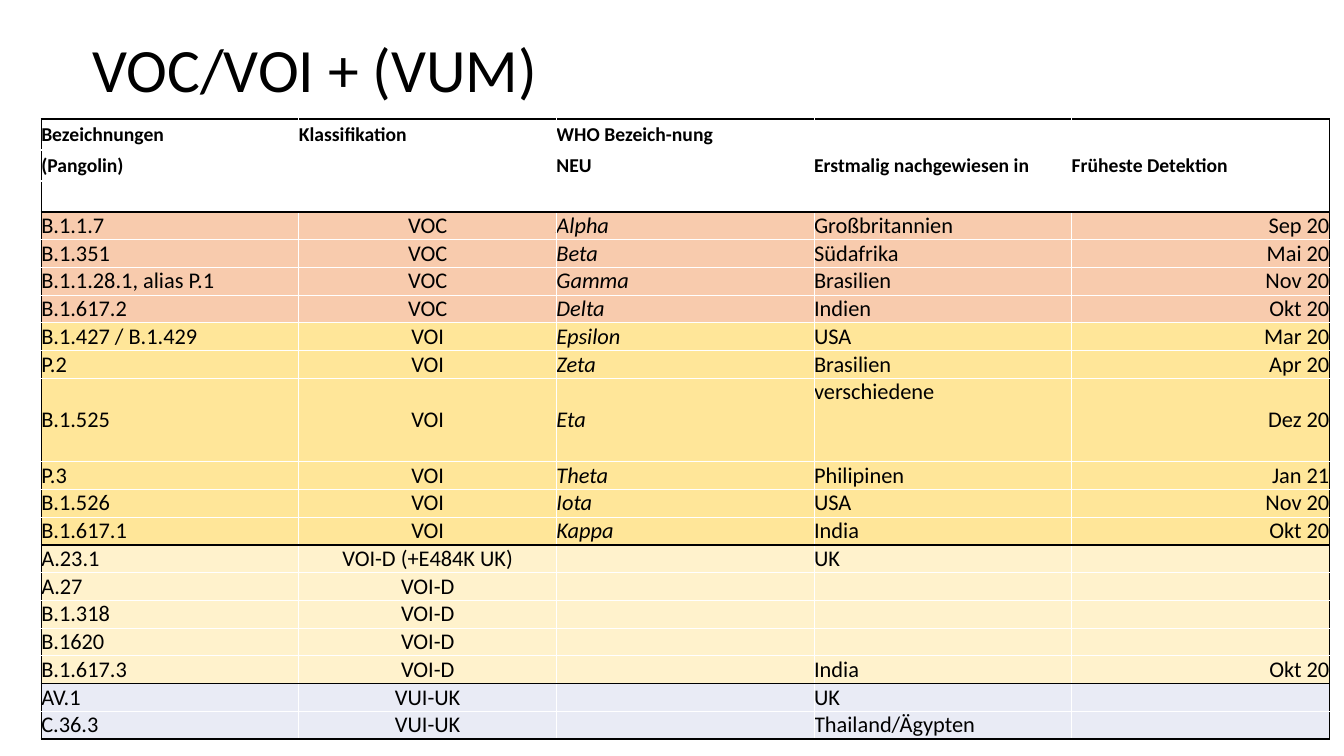
from lxml import etree
from pptx import Presentation
from pptx.dml.color import RGBColor
from pptx.enum.text import MSO_ANCHOR, PP_ALIGN
from pptx.oxml.ns import qn
from pptx.util import Cm, Pt

LEFT, CENTER, RIGHT = PP_ALIGN.LEFT, PP_ALIGN.CENTER, PP_ALIGN.RIGHT
TOP, MIDDLE = MSO_ANCHOR.TOP, MSO_ANCHOR.MIDDLE

COLORS = {
    "ink": "000000",
    "paper": "FFFFFF",
    "VOC": "F8CBAD",
    "VOI": "FFE699",
    "VOI-D": "FFF2CC",
    "VUI-UK": "E9EBF5",
}
TITLE_FORMAT = {"size": Pt(44)}
HEADER_FORMAT = {"size": Pt(14), "bold": True}
BODY_FORMAT = {"size": Pt(16), "bold": False}
WHO_FORMAT = {**BODY_FORMAT, "italic": True}

HEADER = [
    ["Bezeichnungen", "Klassifikation", "WHO Bezeich-nung",
     "Erstmalig nachgewiesen in", "Früheste Detektion"],
    ["(Pangolin)", "", "NEU", "", ""],
    ["", "", "", "", ""],
]
MERGED_HEADER_COLUMNS = (3, 4)
VARIANTS = [
    ["B.1.1.7", "VOC", "Alpha", "Großbritannien", "Sep 20"],
    ["B.1.351", "VOC", "Beta", "Südafrika", "Mai 20"],
    ["B.1.1.28.1, alias P.1", "VOC", "Gamma", "Brasilien", "Nov 20"],
    ["B.1.617.2", "VOC", "Delta", "Indien", "Okt 20"],
    ["B.1.427 / B.1.429", "VOI", "Epsilon", "USA", "Mar 20"],
    ["P.2", "VOI", "Zeta", "Brasilien", "Apr 20"],
    ["B.1.525", "VOI", "Eta", "verschiedene", "Dez 20"],
    ["P.3", "VOI", "Theta", "Philipinen", "Jan 21"],
    ["B.1.526", "VOI", "Iota", "USA", "Nov 20"],
    ["B.1.617.1", "VOI", "Kappa", "India", "Okt 20"],
    ["A.23.1", "VOI-D (+E484K UK)", "", "UK", ""],
    ["A.27", "VOI-D", "", "", ""],
    ["B.1.318", "VOI-D", "", "", ""],
    ["B.1620", "VOI-D", "", "", ""],
    ["B.1.617.3", "VOI-D", "", "India", "Okt 20"],
    ["AV.1", "VUI-UK", "", "UK", ""],
    ["C.36.3", "VUI-UK", "", "Thailand/Ägypten", ""],
]
COLUMN_ALIGNMENTS = [LEFT, CENTER, LEFT, LEFT, RIGHT]
COLUMN_FORMATS = [BODY_FORMAT, BODY_FORMAT, WHO_FORMAT, BODY_FORMAT, BODY_FORMAT]
RULED_ROWS = {0, 3, 13, 18, 20}  # a dark rule runs above each of these rows
HEADER_HEIGHT, VARIANT_HEIGHT, TALL_HEIGHT = 0.78, 0.7, 2.1
TALL_VARIANT = "B.1.525"


class VariantSlide:
    """Holds the style and the slide being filled."""

    def __init__(self, slide, font="Calibri", border_width=Pt(1)):
        self.slide = slide
        self.font = font
        self.border_width = border_width

    def text(self, paragraph, wording, style, alignment=LEFT):
        paragraph.alignment = alignment
        if not wording:
            # The end mark keeps an empty cell as low as its row.
            end_mark = etree.SubElement(paragraph._p, qn("a:endParaRPr"))
            end_mark.set("sz", str(int(style["size"].pt * 100)))
            return
        run = paragraph.add_run()
        run.text = wording
        for attribute, value in {"name": self.font, **style}.items():
            setattr(run.font, attribute, value)
        run.font.color.rgb = RGBColor.from_string(COLORS["ink"])

    def title(self, wording, left, top, width, height):
        frame = self.slide.shapes.add_textbox(
            Cm(left), Cm(top), Cm(width), Cm(height)).text_frame
        frame.word_wrap = True
        frame.vertical_anchor = MIDDLE
        frame.paragraphs[0].line_spacing = 0.9
        self.text(frame.paragraphs[0], wording, TITLE_FORMAT)

    def table(self, left, top, width, heights, column_count):
        table = self.slide.shapes.add_table(
            len(heights), column_count,
            Cm(left), Cm(top), Cm(width), Cm(sum(heights))).table
        table.first_row = table.horz_banding = False
        for row, height in zip(table.rows, heights):
            row.height = Cm(height)
        return table

    def cell(self, cell, wording, fill, style, alignment, anchor, dark_sides):
        for side in ("margin_left", "margin_right", "margin_top", "margin_bottom"):
            setattr(cell, side, 0)
        cell.vertical_anchor = anchor
        self.text(cell.text_frame.paragraphs[0], wording, style, alignment)
        self.borders(cell, dark_sides)
        cell.fill.solid()
        cell.fill.fore_color.rgb = RGBColor.from_string(COLORS[fill])

    def borders(self, cell, dark_sides):
        properties = cell._tc.get_or_add_tcPr()
        for side in "LRTB":
            line = etree.SubElement(
                properties, qn(f"a:ln{side}"), w=str(self.border_width))
            solid = etree.SubElement(line, qn("a:solidFill"))
            color = COLORS["ink" if side in dark_sides else "paper"]
            etree.SubElement(solid, qn("a:srgbClr"), val=color)


def dark_sides(row, column, row_span):
    """Sides of a cell that lie on the outer frame or on a group rule."""
    on_rule = {
        "L": column == 0,
        "R": column == len(COLUMN_ALIGNMENTS) - 1,
        "T": row in RULED_ROWS,
        "B": row + row_span in RULED_ROWS,
    }
    return {side for side, dark in on_rule.items() if dark}


def main():
    presentation = Presentation()
    presentation.slide_width, presentation.slide_height = Cm(33.87), Cm(19.05)
    page = VariantSlide(presentation.slides.add_slide(presentation.slide_layouts[6]))

    page.title("VOC/VOI + (VUM)", 2.08, 0, 29.21, 3.68)

    heights = [HEADER_HEIGHT] * len(HEADER) + [
        TALL_HEIGHT if variant[0] == TALL_VARIANT else VARIANT_HEIGHT
        for variant in VARIANTS]
    table = page.table(1.04, 3, 32.46, heights, len(COLUMN_ALIGNMENTS))
    for column in MERGED_HEADER_COLUMNS:
        table.cell(0, column).merge(table.cell(len(HEADER) - 1, column))

    for row, entries in enumerate(HEADER + VARIANTS):
        is_header = row < len(HEADER)
        fill = "paper" if is_header else entries[1].split()[0]
        for column, wording in enumerate(entries):
            cell = table.cell(row, column)
            is_tall_origin = entries[0] == TALL_VARIANT and column == 3
            page.cell(
                cell, wording, fill,
                HEADER_FORMAT if is_header else COLUMN_FORMATS[column],
                LEFT if is_header else COLUMN_ALIGNMENTS[column],
                TOP if is_tall_origin else MIDDLE,
                dark_sides(row, column, cell.span_height))

    presentation.save("out.pptx")


if __name__ == "__main__":
    main()
